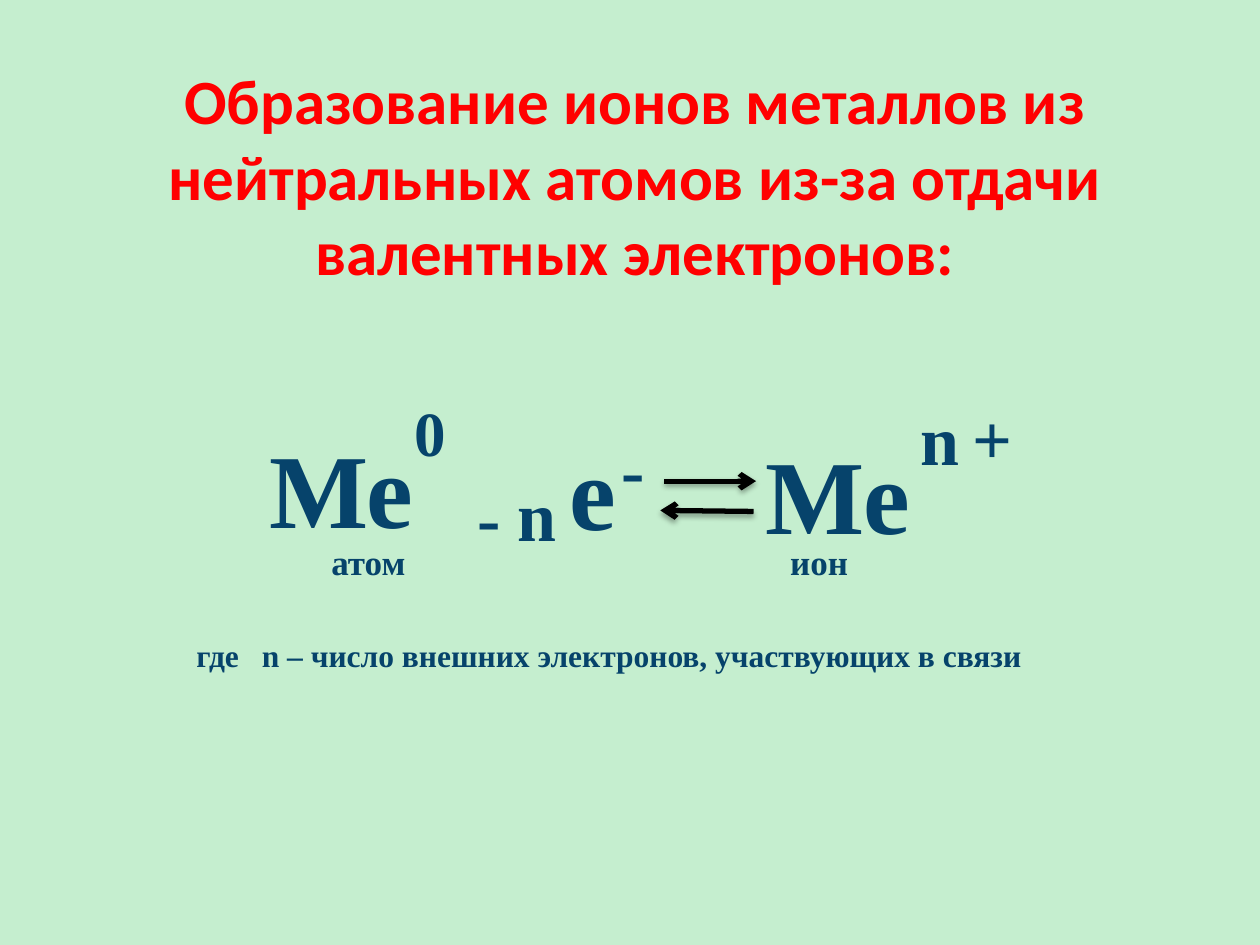
"""Build the slide on how metal atoms turn into ions."""
from typing import NamedTuple

from lxml.etree import SubElement
from pptx import Presentation
from pptx.dml.color import RGBColor
from pptx.enum.shapes import MSO_CONNECTOR
from pptx.enum.text import MSO_ANCHOR, MSO_AUTO_SIZE, PP_ALIGN
from pptx.oxml.ns import qn
from pptx.slide import Slide
from pptx.util import Cm, Pt

MINT = RGBColor(0xC5, 0xEE, 0xCF)
RED = RGBColor(0xFF, 0x00, 0x00)
NAVY = RGBColor(0x06, 0x43, 0x6B)
BLACK = RGBColor(0x00, 0x00, 0x00)

HEADING_FONT = {"name": "Calibri", "size": Pt(36), "bold": True}
FORMULA_FONT = {"name": "Times New Roman", "bold": True}
HEADING_FRAME = {
    "word_wrap": True,
    "auto_size": MSO_AUTO_SIZE.NONE,
    "vertical_anchor": MSO_ANCHOR.MIDDLE,
}
HEADING_PLACE = {"left": Cm(1.37), "top": Cm(0.94), "width": Cm(22.86), "height": Cm(5.18)}


class Term(NamedTuple):
    text: str
    size: int
    left: float
    top: float
    width: float
    height: float
    wrap: bool = False
    tab: float = 0


class Arrow(NamedTuple):
    start_x: float
    start_y: float
    end_x: float
    end_y: float


TERMS = [
    Term("Ме", 60, 5.18, 8.15, 3.48, 4.06),
    Term("0", 36, 8.1, 7.65, 1.14, 2.59),
    Term("-", 40, 9.37, 9.25, 0.99, 2.82),
    Term("n", 40, 10.19, 9.22, 1.3, 2.82),
    Term("е", 60, 11.23, 8.2, 1.47, 4.06),
    Term("-", 40, 12.27, 8.28, 0.99, 2.82),
    Term("Ме", 60, 15.19, 8.28, 4.37, 4.06, wrap=True),
    Term("n", 40, 18.31, 7.67, 1.3, 2.82),
    Term("+", 40, 19.35, 7.65, 1.32, 2.82),
    Term("атом\tион", 20, 6.43, 10.69, 11.07, 1.6, wrap=True, tab=9.25),
    Term("где\tn – число внешних электронов, участвующих в связи",
         18, 3.71, 12.62, 19.81, 1.47, wrap=True, tab=1.32),
]
ARROWS = [Arrow(13.39, 9.7, 15.24, 9.7), Arrow(15.19, 10.31, 13.31, 10.29)]


def apply_format(target: object, values: dict) -> None:
    for attribute, value in values.items():
        setattr(target, attribute, value)


def add_heading(slide: Slide, text: str) -> None:
    heading = slide.shapes.title
    apply_format(heading, HEADING_PLACE)
    apply_format(heading.text_frame, HEADING_FRAME)
    heading.text_frame.text = text
    paragraph = heading.text_frame.paragraphs[0]
    paragraph.alignment = PP_ALIGN.CENTER
    font = paragraph.runs[0].font
    apply_format(font, HEADING_FONT)
    font.color.rgb = RED


def add_term(slide: Slide, term: Term) -> None:
    place = map(Cm, (term.left, term.top, term.width, term.height))
    frame = slide.shapes.add_textbox(*place).text_frame
    frame.word_wrap = term.wrap
    paragraph = frame.paragraphs[0]
    paragraph.line_spacing = 1.1
    if term.tab:
        stops = SubElement(paragraph._p.get_or_add_pPr(), qn("a:tabLst"))
        SubElement(stops, qn("a:tab"), pos=str(Cm(term.tab)), algn="l")
    symbol = paragraph.add_run()
    symbol.text = term.text
    apply_format(symbol.font, FORMULA_FONT | {"size": Pt(term.size)})
    symbol.font.color.rgb = NAVY


def add_arrow(slide: Slide, arrow: Arrow) -> None:
    connector = slide.shapes.add_connector(MSO_CONNECTOR.STRAIGHT, *map(Cm, arrow))
    connector.line.width = Pt(3)
    connector.line.color.rgb = BLACK
    SubElement(connector.line._get_or_add_ln(), qn("a:tailEnd"), type="arrow")
    effects = SubElement(connector._element.spPr, qn("a:effectLst"))
    shadow = SubElement(effects, qn("a:outerShdw"), blurRad=str(Pt(3.1)),
                        dist=str(Pt(1.8)), dir="5400000", rotWithShape="0")
    tint = SubElement(shadow, qn("a:srgbClr"), val=str(BLACK))
    SubElement(tint, qn("a:alpha"), val="35000")


def main() -> None:
    presentation = Presentation()
    apply_format(presentation, {"slide_width": Cm(25.4), "slide_height": Cm(19.05)})
    slide = presentation.slides.add_slide(presentation.slide_layouts.get_by_name("Title Only"))
    background = slide.background.fill
    background.solid()
    background.fore_color.rgb = MINT
    add_heading(slide, "Образование ионов металлов из нейтральных атомов "
                       "из-за отдачи валентных электронов:")
    for term in TERMS:
        add_term(slide, term)
    for arrow in ARROWS:
        add_arrow(slide, arrow)
    presentation.save("out.pptx")


if __name__ == "__main__":
    main()
